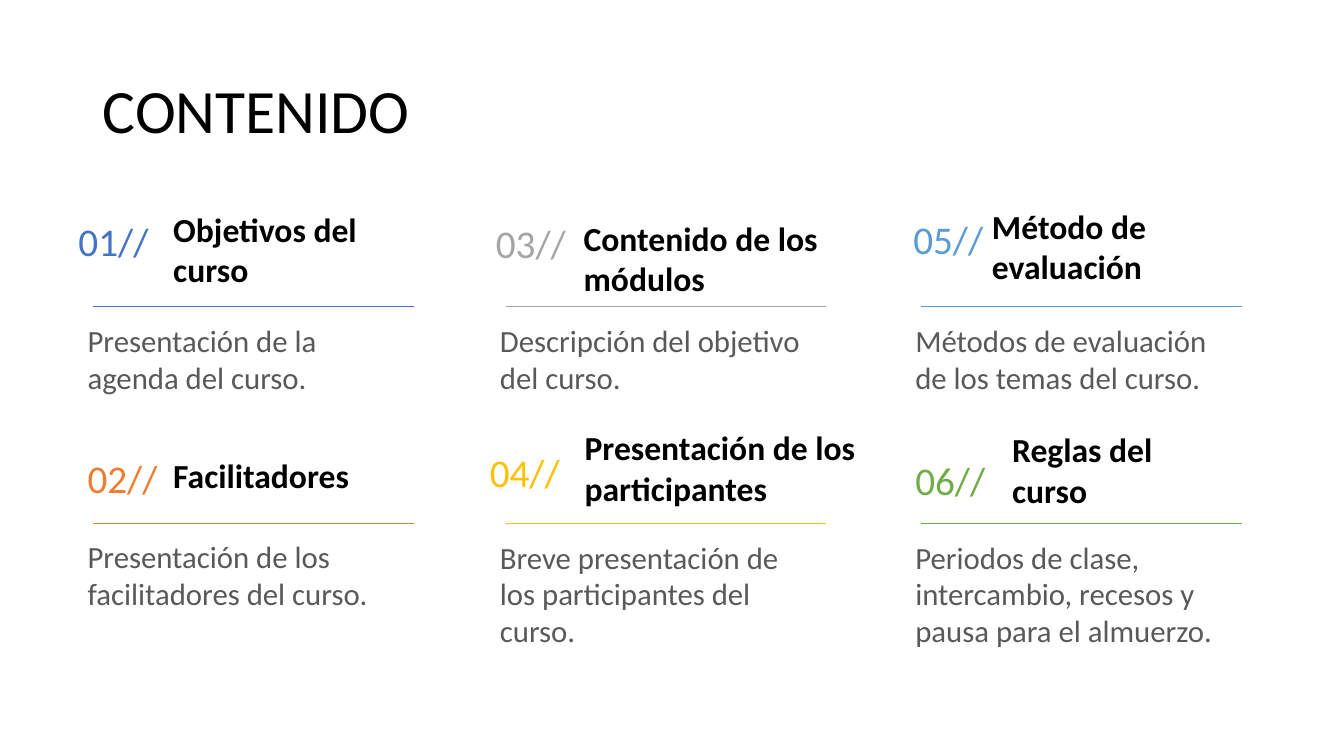
from pptx import Presentation
from pptx.dml.color import RGBColor
from pptx.enum.shapes import MSO_CONNECTOR
from pptx.enum.text import MSO_ANCHOR, MSO_AUTO_SIZE, PP_ALIGN
from pptx.oxml.ns import qn
from pptx.util import Inches, Pt
from lxml.etree import SubElement

BLACK = RGBColor(0x00, 0x00, 0x00)
GRAY_TEXT = RGBColor(0x59, 0x59, 0x59)
BLUE = RGBColor(0x44, 0x72, 0xC4)
ORANGE = RGBColor(0xED, 0x7D, 0x31)
GRAY = RGBColor(0xA5, 0xA5, 0xA5)
GOLD = RGBColor(0xFF, 0xC0, 0x00)
SKY = RGBColor(0x5B, 0x9B, 0xD5)
GREEN = RGBColor(0x70, 0xAD, 0x47)

COLUMN_LEFTS = (0.77, 4.86, 8.98)
RULE_TOPS = (3.04, 5.19)
RULE_INDENT = 0.155
RULE_WIDTH = 3.18
DESCRIPTION_GAP = 0.1

TOPICS = [
    (BLUE, (0.68, 2.11), "Objetivos del curso", (1.62, 2.02, 2.27, 0.91), True,
     "Presentación de la agenda del curso.", 0.84),
    (ORANGE, (0.77, 4.46), "Facilitadores", (1.62, 4.46, 1.97, 0.5), False,
     "Presentación de los facilitadores del curso.", 0.84),
    (GRAY, (4.82, 2.13), "Contenido de los módulos", (5.69, 2.11, 2.75, 0.91), True,
     "Descripción del objetivo del curso.", 0.84),
    (GOLD, (4.76, 4.4), "Presentación de los\nparticipantes", (5.7, 4.19, 3.06, 0.91), True,
     "Breve presentación de los participantes del curso.", 1.21),
    (SKY, (8.96, 2.09), "Método de evaluación", (9.74, 1.99, 2.68, 0.91), True,
     "Métodos de evaluación de los temas del curso.", 0.84),
    (GREEN, (8.98, 4.48), "Reglas del curso", (9.94, 4.21, 2.03, 0.91), True,
     "Periodos de clase, intercambio, recesos y pausa para el almuerzo.", 1.21),
]


def format_text(frame, size, color, bold=False):
    for paragraph in frame.paragraphs:
        for run in paragraph.runs:
            run.font.name = "Calibri"
            run.font.size = Pt(size)
            run.font.bold = bold
            run.font.color.rgb = color


def add_title(slide, text):
    title = slide.shapes.title
    title.left, title.top = Inches(0.92), Inches(0.4)
    title.width, title.height = Inches(11.5), Inches(1.45)
    frame = title.text_frame
    frame.text = text
    frame.vertical_anchor = MSO_ANCHOR.MIDDLE
    frame.paragraphs[0].alignment = PP_ALIGN.LEFT
    frame.paragraphs[0].line_spacing = 0.9
    format_text(frame, 44, BLACK)


def add_text(slide, text, box, size, color, bold=False, wrap=True):
    frame = slide.shapes.add_textbox(*map(Inches, box)).text_frame
    frame.text = text
    frame.word_wrap = wrap
    frame.auto_size = MSO_AUTO_SIZE.SHAPE_TO_FIT_TEXT
    format_text(frame, size, color, bold)


def add_rule(slide, left, top, color):
    rule = slide.shapes.add_connector(
        MSO_CONNECTOR.STRAIGHT, Inches(left), Inches(top),
        Inches(left + RULE_WIDTH), Inches(top))
    rule.line.color.rgb = color
    rule.line.width = Pt(0.5)
    SubElement(rule._element.spPr, qn("a:effectLst"))


def add_topic(slide, index, topic):
    color, number_at, heading, heading_box, wrap, description, height = topic
    column, row = divmod(index, len(RULE_TOPS))
    left, rule_top = COLUMN_LEFTS[column], RULE_TOPS[row]
    add_text(slide, f"{index + 1:02d}//", (*number_at, 1.19, 0.95), 28, color, wrap=False)
    add_text(slide, heading, heading_box, 24, BLACK, bold=True, wrap=wrap)
    add_text(slide, description, (left, rule_top + DESCRIPTION_GAP, 3.32, height),
             22, GRAY_TEXT)
    add_rule(slide, left + RULE_INDENT, rule_top, color)


def main():
    presentation = Presentation()
    presentation.slide_width = Inches(13.33)
    presentation.slide_height = Inches(7.5)
    slide = presentation.slides.add_slide(presentation.slide_layouts[5])
    add_title(slide, "CONTENIDO")
    for index, topic in enumerate(TOPICS):
        add_topic(slide, index, topic)
    presentation.save("out.pptx")


if __name__ == "__main__":
    main()
